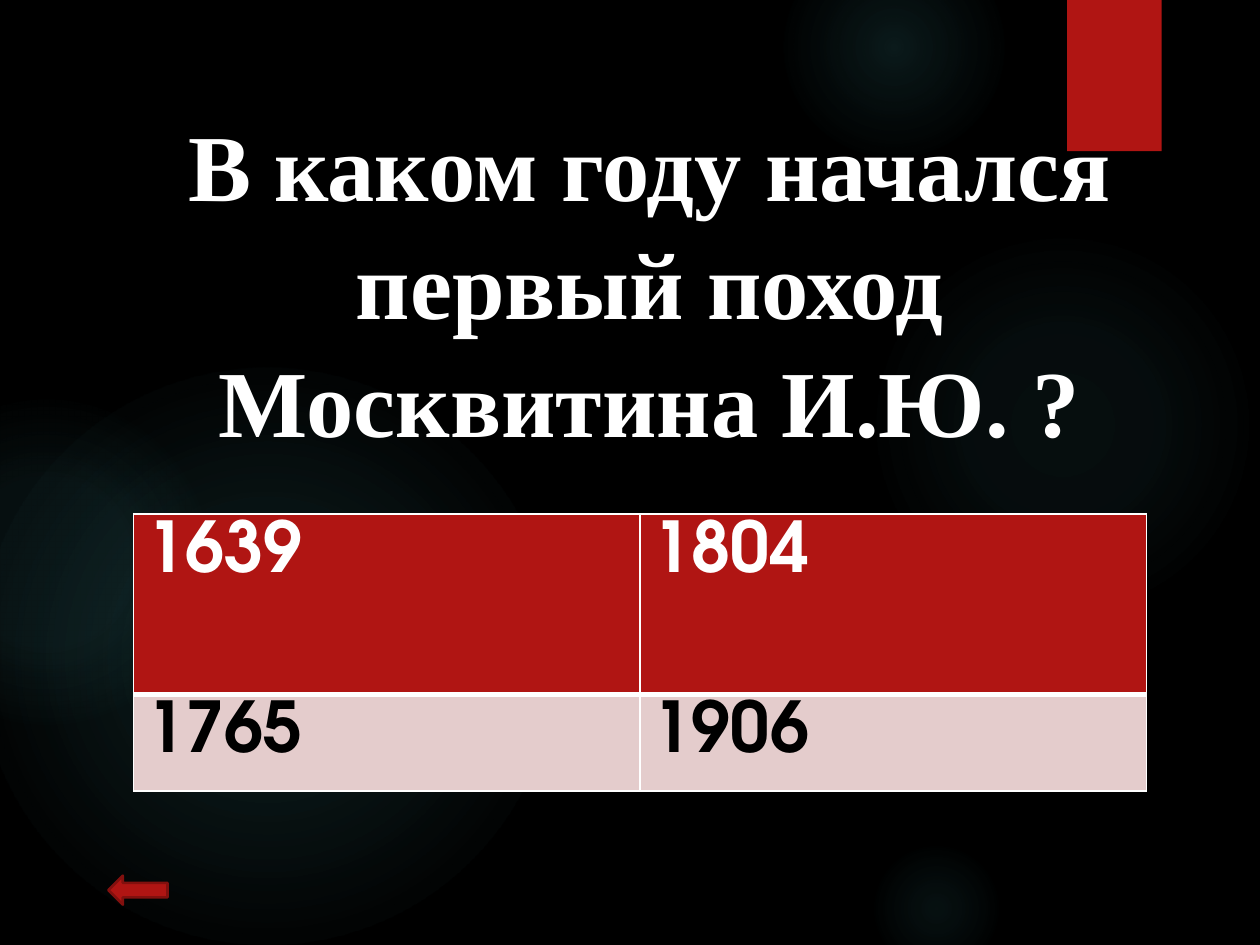
import lxml.etree
import pptx
import pptx.dml.color
import pptx.enum.shapes
import pptx.enum.text
import pptx.oxml
import pptx.oxml.ns
import pptx.util

Inches = pptx.util.Inches
Pt = pptx.util.Pt
Shapes = pptx.enum.shapes.MSO_SHAPE

RED, DARK_RED, PINK = "B01513", "82100E", "E4CCCC"
WHITE, BLACK, GLOW = "FFFFFF", "000000", "50B9C1"

# left, top, diameter, then (stop, opacity) pairs in percent
GLOWS = [
    (6.89, 1.83, 3.08, [(0, 7), (36, 6), (69, 0)]),
    (6.22, -0.5, 1.75, [(0, 14), (36, 7), (73, 0)]),
    (6.89, 6.67, 1.08, [(0, 9), (36, 5), (66, 0)]),
    (-0.17, 2.92, 4.58, [(0, 11), (36, 10), (75, 0)]),
    (-0.92, 3.17, 2.58, [(0, 8), (36, 8), (72, 0)]),
]
ANSWERS = [["1639", "1804"], ["1765", "1906"]]
ROW_HEIGHTS = [1.43, 0.77]
ROW_STYLES = [(RED, WHITE), (PINK, BLACK)]


def set_color(fill, color):
    fill.solid()
    fill.fore_color.rgb = pptx.dml.color.RGBColor.from_string(color)


def add_run(paragraph, text, font_name, size, color):
    run = paragraph.add_run()
    run.text = text
    run.font.name = font_name
    run.font.size = Pt(size)
    run.font.bold = True
    set_color(run.font.fill, color)


def add_shape(slide, kind, left, top, width, height, color, line_color=None):
    shape = slide.shapes.add_shape(
        kind, Inches(left), Inches(top), Inches(width), Inches(height))
    shape.shadow.inherit = False
    set_color(shape.fill, color)
    if line_color:
        set_color(shape.line.fill, line_color)
        shape.line.width = Pt(1.5)
    else:
        shape.line.fill.background()
    return shape


def add_glow(slide, left, top, diameter, stops):
    """Add a circle that fades from its centre to full transparency."""
    shape = add_shape(slide, Shapes.OVAL, left, top, diameter, diameter, GLOW)
    stop_xml = "".join(
        f'<a:gs pos="{position * 1000}"><a:srgbClr val="{GLOW}">'
        f'<a:alpha val="{opacity * 1000}"/></a:srgbClr></a:gs>'
        for position, opacity in stops)
    gradient = pptx.oxml.parse_xml(
        f'<a:gradFill {pptx.oxml.ns.nsdecls("a")} rotWithShape="1">'
        f'<a:gsLst>{stop_xml}</a:gsLst><a:path path="circle">'
        '<a:fillToRect l="50000" t="50000" r="50000" b="50000"/>'
        '</a:path></a:gradFill>')
    solid = shape.element.spPr.find(pptx.oxml.ns.qn("a:solidFill"))
    solid.getparent().replace(solid, gradient)


def set_borders(cell, widths):
    """Draw white borders, with widths in points for left, right, top, bottom."""
    properties = cell._tc.get_or_add_tcPr()
    for index, (side, width) in enumerate(zip("LRTB", widths)):
        properties.insert(index, pptx.oxml.parse_xml(
            f'<a:ln{side} {pptx.oxml.ns.nsdecls("a")} w="{Pt(width)}">'
            f'<a:solidFill><a:srgbClr val="{WHITE}"/></a:solidFill></a:ln{side}>'))


def add_question(slide, text):
    title = slide.shapes.title
    title.left, title.top = Inches(1.06), Inches(0.84)
    title.width, title.height = Inches(8.19), Inches(2.83)
    frame = title.text_frame
    frame.word_wrap = True
    frame.auto_size = pptx.enum.text.MSO_AUTO_SIZE.NONE
    frame.vertical_anchor = pptx.enum.text.MSO_ANCHOR.BOTTOM
    paragraph = frame.paragraphs[0]
    paragraph.alignment = pptx.enum.text.PP_ALIGN.CENTER
    paragraph.line_spacing = 1.04
    add_run(paragraph, text, "Times New Roman", 54, WHITE)
    # Bring the title in front of the decoration
    slide.shapes.element.append(title.element)


def add_answers(slide):
    table = slide.shapes.add_table(
        2, 2, Inches(1.06), Inches(4.08),
        Inches(8.04), Inches(sum(ROW_HEIGHTS))).table
    for row_index, (fill_color, text_color) in enumerate(ROW_STYLES):
        table.rows[row_index].height = Inches(ROW_HEIGHTS[row_index])
        widths = (1, 1, 1, 3) if row_index == 0 else (1, 1, 3, 1)
        for column_index, answer in enumerate(ANSWERS[row_index]):
            cell = table.cell(row_index, column_index)
            set_color(cell.fill, fill_color)
            set_borders(cell, widths)
            add_run(cell.text_frame.paragraphs[0], answer,
                    "TeX Gyre Adventor", 40, text_color)


def main():
    presentation = pptx.Presentation()
    presentation.slide_width = Inches(10)
    presentation.slide_height = Inches(7.5)
    slide = presentation.slides.add_slide(presentation.slide_layouts[5])
    set_color(slide.background.fill, BLACK)
    for glow in GLOWS:
        add_glow(slide, *glow)
    add_shape(slide, Shapes.RECTANGLE, 8.47, 0, 0.75, 1.2, RED)
    add_shape(slide, Shapes.LEFT_ARROW, 0.86, 6.95, 0.47, 0.23, RED, DARK_RED)
    add_question(slide, "В каком году начался первый поход Москвитина И.Ю. ?")
    add_answers(slide)
    presentation.save("out.pptx")


if __name__ == "__main__":
    main()
